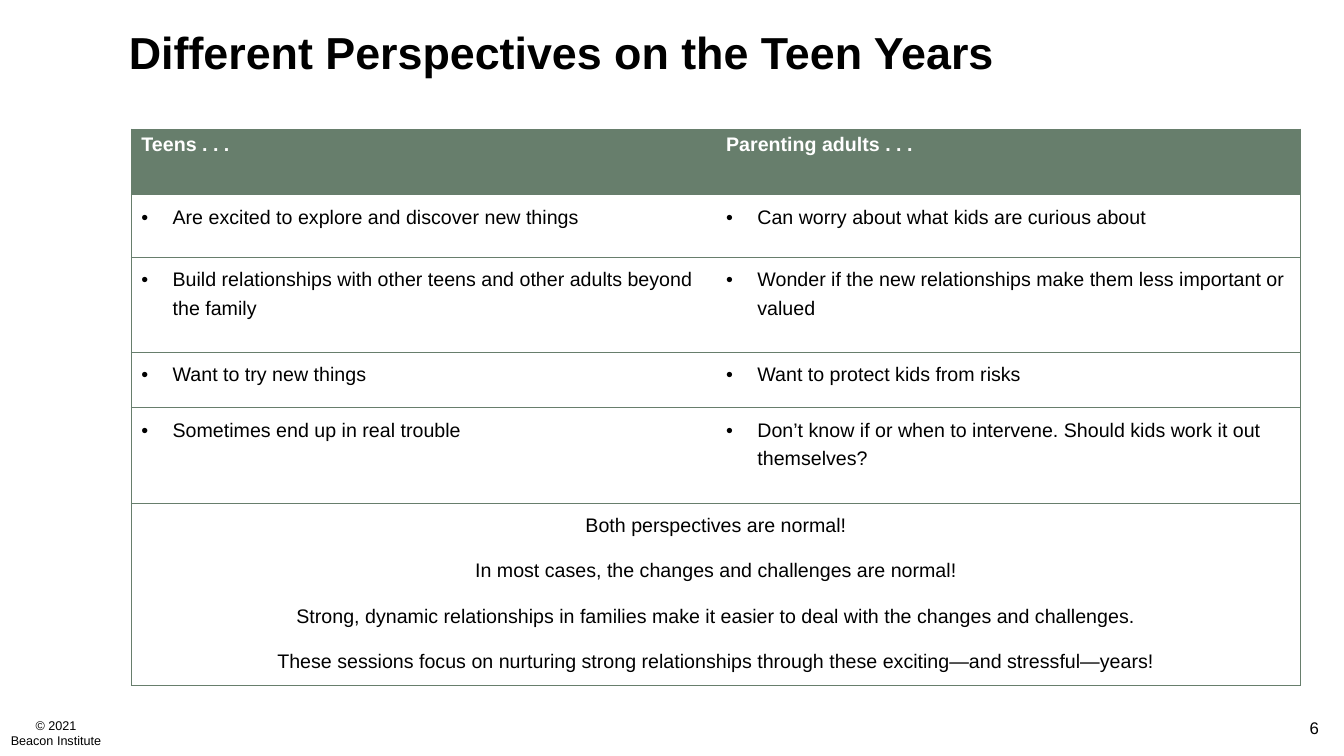
from lxml import etree
from pptx import Presentation
from pptx import util as u
from pptx.dml.color import RGBColor
from pptx.enum import text
from pptx.oxml.ns import qn

GREEN, BLACK, WHITE = "677E6C", "000000", "FFFFFF"
WIDTH, HEIGHT = u.Inches(13.33), u.Inches(7.5)
ALIGN, ANCHOR = text.PP_ALIGN, text.MSO_ANCHOR

HEADINGS = ("Teens . . .", "Parenting adults . . .")
PERSPECTIVES = [
    ("Are excited to explore and discover new things",
     "Can worry about what kids are curious about"),
    ("Build relationships with other teens and other adults beyond the family",
     "Wonder if the new relationships make them less important or valued"),
    ("Want to try new things",
     "Want to protect kids from risks"),
    ("Sometimes end up in real trouble",
     "Don’t know if or when to intervene. Should kids work it out themselves?"),
]
CONCLUSIONS = [
    "Both perspectives are normal!",
    "In most cases, the changes and challenges are normal!",
    "Strong, dynamic relationships in families make it easier to deal with "
    "the changes and challenges.",
    "These sessions focus on nurturing strong relationships through these "
    "exciting—and stressful—years!",
]
ROW_HEIGHTS = [8.67, 8.27, 12.6, 7.33, 12.6, 23.33]


def rgb(value):
    return RGBColor.from_string(value)


def across(percent):
    """Length of a share of the slide's width."""
    return round(WIDTH * percent / 100)


def down(percent):
    """Length of a share of the slide's height."""
    return round(HEIGHT * percent / 100)


def add_bullet(p, indent=0.31):
    pPr = p._p.get_or_add_pPr()
    pPr.set("marL", str(u.Inches(indent)))
    pPr.set("indent", str(-u.Inches(indent)))
    etree.SubElement(pPr, qn("a:buFont"), typeface="Arial")
    etree.SubElement(pPr, qn("a:buChar"), char="•")


def write(tf, lines, size=14, color=BLACK, bold=False, align=ALIGN.LEFT,
          spacing=1.0, gap=0, bullet=False):
    """Fill a text frame, one paragraph a line, with gap points between them."""
    tf.word_wrap = True
    for i, line in enumerate(lines):
        p = tf.paragraphs[0] if i == 0 else tf.add_paragraph()
        p.alignment = align
        p.line_spacing = spacing
        if i and gap:
            p.space_before = u.Pt(gap)
        if bullet:
            add_bullet(p)
        r = p.add_run()
        r.text = line
        r.font.name = "Arial"
        r.font.size = u.Pt(size)
        r.font.bold = bold
        r.font.color.rgb = rgb(color)


def add_text(slide, left, top, width, height, lines, anchor=ANCHOR.MIDDLE, **style):
    box = slide.shapes.add_textbox(across(left), down(top), across(width), down(height))
    box.text_frame.vertical_anchor = anchor
    write(box.text_frame, lines, **style)


def style_cell(cell, fill, edges):
    """Draw the named edges (L, R, T, B), clear the others, and set the fill."""
    tcPr = cell._tc.get_or_add_tcPr()
    for side in "LRTB":
        ln = etree.SubElement(tcPr, qn(f"a:ln{side}"), w=str(u.Pt(0.5)))
        if side in edges:
            line = etree.SubElement(ln, qn("a:solidFill"))
            etree.SubElement(line, qn("a:srgbClr"), val=GREEN)
        else:
            etree.SubElement(ln, qn("a:noFill"))
    cell.fill.solid()
    cell.fill.fore_color.rgb = rgb(fill)


def add_perspectives_table(slide, left, top, width):
    frame = slide.shapes.add_table(len(ROW_HEIGHTS), 2, across(left), down(top),
                                   across(width), down(sum(ROW_HEIGHTS)))
    table = frame.table
    table.first_row = table.horz_banding = False
    for row, height in zip(table.rows, ROW_HEIGHTS):
        row.height = down(height)

    for i, pair in enumerate([HEADINGS] + PERSPECTIVES):
        for cell, line, side in zip(table.rows[i].cells, pair, "LR"):
            if i == 0:
                write(cell.text_frame, [line], color=WHITE, bold=True)
            else:
                write(cell.text_frame, [line], spacing=1.3, bullet=True)
            style_cell(cell, WHITE if i else GREEN, side + "TB")

    last = len(ROW_HEIGHTS) - 1
    conclusion = table.cell(last, 0)
    conclusion.merge(table.cell(last, 1))
    write(conclusion.text_frame, CONCLUSIONS, align=ALIGN.CENTER, spacing=1.3, gap=12)
    for cell in table.rows[last].cells:
        style_cell(cell, WHITE, "LRTB")


def main():
    prs = Presentation()
    prs.slide_width, prs.slide_height = WIDTH, HEIGHT
    slide = prs.slides.add_slide(prs.slide_layouts[6])
    add_text(slide, 0, 94.27, 8.33, 5.33, ["© 2021", "Beacon Institute"],
             size=9, align=ALIGN.CENTER)
    add_text(slide, 8.85, 2.8, 85.75, 9.07, ["Different Perspectives on the Teen Years"],
             size=32, bold=True, spacing=0.9)
    add_text(slide, 76.37, 94.27, 22.5, 5.33, ["6"], anchor=ANCHOR.TOP,
             size=12, align=ALIGN.RIGHT)
    add_perspectives_table(slide, 9.77, 17.07, 87.02)
    prs.save("out.pptx")


if __name__ == "__main__":
    main()
